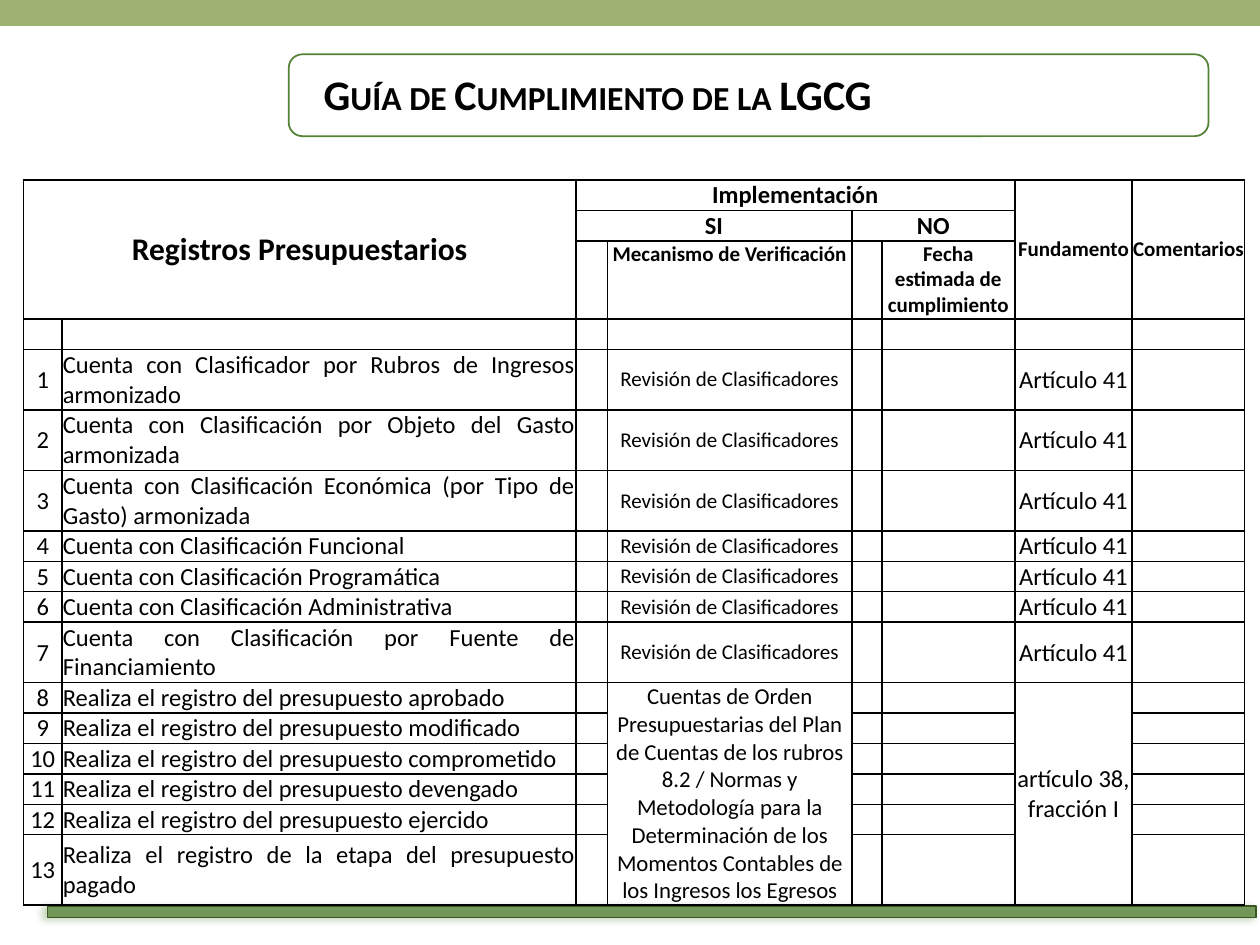
from lxml import etree
from pptx import Presentation
from pptx.dml.color import RGBColor
from pptx.enum.shapes import MSO_SHAPE
from pptx.enum.text import MSO_ANCHOR, PP_ALIGN
from pptx.oxml.ns import qn
from pptx.util import Pt

RECT, ROUND = MSO_SHAPE.RECTANGLE, MSO_SHAPE.ROUNDED_RECTANGLE
LEFT, CENTER, JUSTIFY = PP_ALIGN.LEFT, PP_ALIGN.CENTER, PP_ALIGN.JUSTIFY
TOP, MIDDLE = MSO_ANCHOR.TOP, MSO_ANCHOR.MIDDLE

LINE, PAIR = 17.4, 34.6  # heights of one-line and two-line rows
COLS = [22, 293.7, 18, 139.7, 17.1, 76, 67.1, 64.3]
ROWS = ([LINE, LINE, 44.6, LINE] + [PAIR] * 3 + [LINE] * 3
        + [PAIR] + [LINE] * 5 + [39.6])
MERGES = [(0, 0, 2, 1), (0, 2, 0, 5), (0, 6, 2, 6), (0, 7, 2, 7),
          (1, 2, 1, 3), (1, 4, 1, 5), (11, 3, 16, 3), (11, 6, 16, 6)]
HEADS = [
    (0, 0, "Registros Presupuestarios", 18, MIDDLE),
    (0, 2, "Implementación", 14, TOP),
    (0, 6, "Fundamento", 12, MIDDLE),
    (0, 7, "Comentarios", 12, MIDDLE),
    (1, 2, "SI", 14, TOP),
    (1, 4, "NO", 14, TOP),
    (2, 3, "Mecanismo de Verificación", 12, TOP),
    (2, 5, "Fecha estimada de cumplimiento", 12, TOP),
]
START = 4  # first numbered row
CHECKS = 7  # items verified by reviewing the classifiers
ITEMS = [
    "Cuenta con Clasificador por Rubros de Ingresos armonizado",
    "Cuenta con Clasificación por Objeto del Gasto armonizada",
    "Cuenta con Clasificación Económica (por Tipo de Gasto) armonizada",
    "Cuenta con Clasificación Funcional",
    "Cuenta con Clasificación Programática",
    "Cuenta con Clasificación Administrativa",
    "Cuenta con Clasificación por Fuente de Financiamiento",
    "Realiza el registro del presupuesto aprobado",
    "Realiza el registro del presupuesto modificado",
    "Realiza el registro del presupuesto comprometido",
    "Realiza el registro del presupuesto devengado",
    "Realiza el registro del presupuesto ejercido",
    "Realiza el registro de la etapa del presupuesto pagado",
]
ORDERS = ("Cuentas de Orden Presupuestarias del Plan de Cuentas de los rubros "
          "8.2 / Normas y Metodología para la Determinación de los Momentos "
          "Contables de los Ingresos los Egresos")


def color(code):
    return RGBColor.from_string(code)


def add_node(node, tag, **attrs):
    child = etree.SubElement(node, qn(tag))
    for key, value in attrs.items():
        child.set(key, str(value))
    return child


def write(frame, text, size=14, bold=False, align=CENTER, caps=False):
    para = frame.paragraphs[0]
    para.alignment = align
    run = para.add_run()
    run.text = text
    font = run.font
    font.name, font.size, font.bold = "Calibri", Pt(size), bold
    font.color.rgb = color("000000")
    if caps:
        font._element.set("cap", "small")


def add_box(slide, kind, box, fill=None, alpha=100, line=None):
    shape = slide.shapes.add_shape(kind, *map(Pt, box))
    shape.shadow.inherit = False
    if fill:
        shape.fill.solid()
        shape.fill.fore_color.rgb = color(fill)
        tint = shape._element.spPr.find(qn("a:solidFill"))[0]
        add_node(tint, "a:alpha", val=alpha * 1000)
    else:
        shape.fill.background()
    if line:
        shape.line.color.rgb = color(line)
        shape.line.width = Pt(1)
    else:
        shape.line.fill.background()
    return shape


def add_shadow(shape):
    effects = shape._element.spPr.find(qn("a:effectLst"))
    glow = add_node(effects, "a:outerShdw", blurRad=Pt(4), dist=Pt(3),
                    dir=180 * 60000, algn="r", rotWithShape=0)
    tint = add_node(glow, "a:srgbClr", val="548235")
    add_node(tint, "a:alpha", val=40000)


def add_title(slide):
    title = slide.shapes.title
    title.left, title.top, title.width, title.height = map(
        Pt, (177.8, 35.3, 389.5, 36))
    title.text_frame.vertical_anchor = MIDDLE
    write(title.text_frame, "Guía de Cumplimiento de la LGCG", size=24,
          bold=True, align=LEFT, caps=True)


def style_cell(cell):
    """Clear the fill, draw black borders and keep empty text small."""
    cell.margin_left = cell.margin_right = Pt(0.5)
    cell.margin_top, cell.margin_bottom = Pt(0.3), 0
    cell.vertical_anchor = MIDDLE
    props = cell._tc.get_or_add_tcPr()
    for side in "LRTB":
        edge = add_node(props, f"a:ln{side}", w=Pt(1))
        add_node(add_node(edge, "a:solidFill"), "a:srgbClr", val="000000")
    cell.fill.background()
    if not cell.text:
        para = cell.text_frame.paragraphs[0]._p
        add_node(para, "a:endParaRPr", sz=1200)


def add_grid(slide):
    frame = slide.shapes.add_table(
        len(ROWS), len(COLS), Pt(13.4), Pt(102.9),
        Pt(sum(COLS)), Pt(sum(ROWS)))
    grid = frame.table
    grid.first_row = grid.horz_banding = False
    for col, width in zip(grid.columns, COLS):
        col.width = Pt(width)
    for row, height in zip(grid.rows, ROWS):
        row.height = Pt(height)
    for top, left, low, right in MERGES:
        grid.cell(top, left).merge(grid.cell(low, right))

    def put(row, col, text, **form):
        write(grid.cell(row, col).text_frame, text, **form)

    for row, col, text, size, _ in HEADS:
        put(row, col, text, size=size, bold=True)
    for num, item in enumerate(ITEMS, 1):
        row = START + num - 1
        put(row, 0, str(num))
        put(row, 1, item, align=JUSTIFY)
        if num <= CHECKS:
            put(row, 3, "Revisión de Clasificadores", size=12)
            put(row, 6, "Artículo 41")
    put(START + CHECKS, 3, ORDERS, size=13)
    put(START + CHECKS, 6, "artículo 38, fracción I")

    for cell in grid.iter_cells():
        style_cell(cell)
    for row, col, _, _, anchor in HEADS:
        grid.cell(row, col).vertical_anchor = anchor


def main():
    deck = Presentation()
    deck.slide_width, deck.slide_height = Pt(720), Pt(540)
    slide = deck.slides.add_slide(deck.slide_layouts[5])
    add_box(slide, ROUND, (165, 31, 525.6, 46.8), line="548235")
    base = add_box(slide, RECT, (27.2, 517.8, 690.5, 6.5), fill="548235",
                   alpha=75, line="385723")
    add_shadow(base)
    add_box(slide, RECT, (0, 0, 720, 14.9), fill="77933C", alpha=71)
    add_grid(slide)
    add_title(slide)
    deck.save("out.pptx")


if __name__ == "__main__":
    main()
